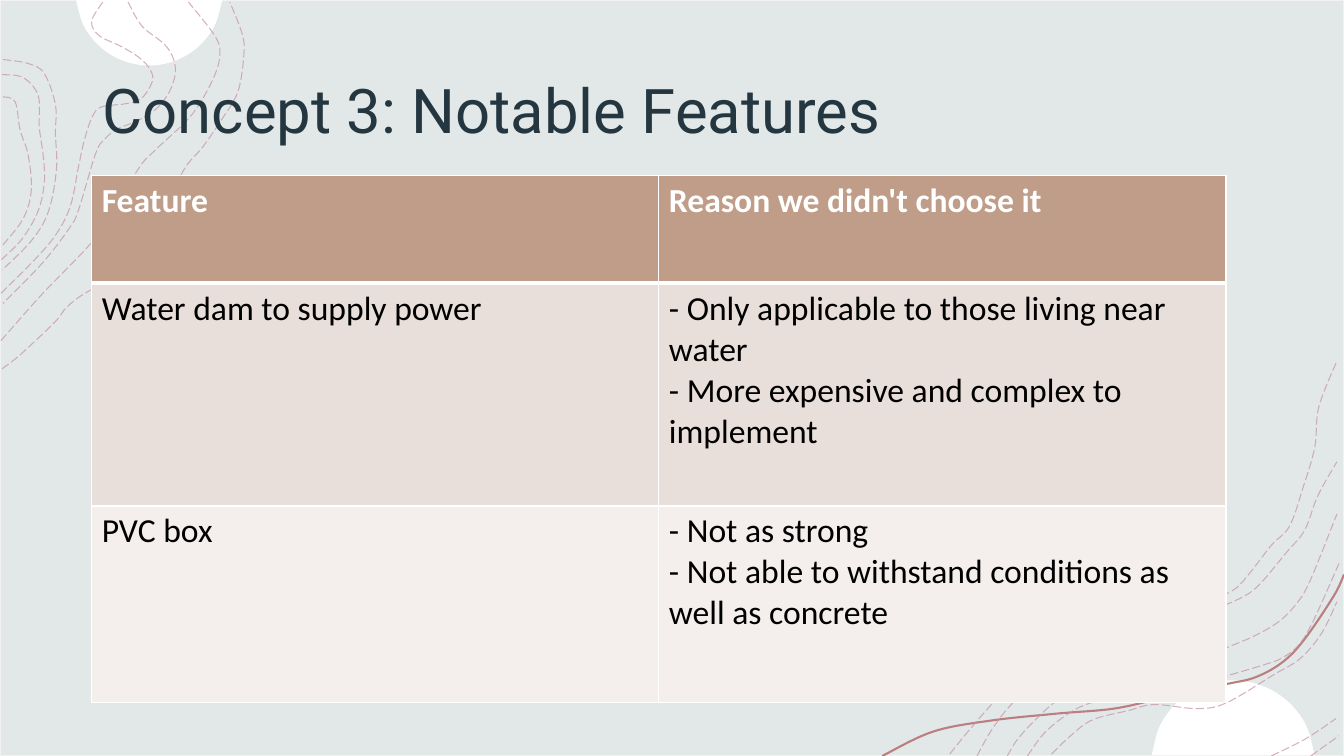
"""Build the notable features slide with its contour-line backdrop."""
from math import cos, radians, sin

from lxml.etree import SubElement
from pptx import Presentation
from pptx.dml.color import RGBColor
from pptx.enum.dml import MSO_LINE
from pptx.enum.shapes import MSO_SHAPE as Preset
from pptx.enum.text import MSO_ANCHOR as Anchor
from pptx.oxml.ns import qn
from pptx.util import Inches, Pt

MIST = RGBColor(0xE2, 0xE8, 0xE8)
EDGE = RGBColor(0xF2, 0xF2, 0xF2)
WHITE = RGBColor(0xFF, 0xFF, 0xFF)
BLACK = RGBColor(0, 0, 0)
NAVY = RGBColor(0x24, 0x37, 0x41)
ROSE = RGBColor(0xBA, 0x7F, 0x81)
MAUVE = RGBColor(0xC6, 0x96, 0xAC)
TAN = RGBColor(0xBF, 0x9D, 0x88)
BLUSH = RGBColor(0xE8, 0xDF, 0xDA)
CREAM = RGBColor(0xF4, 0xEF, 0xED)

RIBBON = [(8.75, 7.5), (9.25, 7.26), (9.82, 7.15), (10.48, 7.08), (11.05, 7.03), (11.55, 6.92),
          (12.15, 6.79), (12.45, 6.72), (12.72, 6.57), (12.94, 6.34), (13.23, 5.91), (13.33, 5.7)]

LEFT_CONTOURS = [
    [(0.02, 3.66), (0.2, 3.52), (0.55, 3.19), (0.66, 3.05), (0.86, 2.9), (1.27, 2.69),
     (1.41, 2.54), (1.6, 2.23), (1.81, 1.71), (2.01, 1.46), (2.19, 1.2), (2.36, 0.91),
     (2.42, 0.53), (2.4, 0.33), (2.28, 0.02)],
    [(0.01, 3.38), (0.38, 2.96), (0.64, 2.69), (0.88, 2.44), (1.08, 2.19), (1.37, 1.68),
     (1.54, 1.49), (1.83, 1.22), (1.98, 1.03), (2.12, 0.77), (2.18, 0.56), (2.14, 0.37),
     (1.87, 0.02)],
    [(1.27, 0.02), (1.41, 0.26), (1.65, 0.46), (1.74, 0.67), (1.69, 0.89), (1.55, 1.08),
     (1.36, 1.2), (1.16, 1.28), (1.04, 1.38), (0.95, 1.52), (0.78, 2.08), (0.69, 2.26),
     (0.42, 2.61), (0.03, 3.01)],
    [(0.01, 2.91), (0.35, 2.57), (0.56, 2.32), (0.7, 2.04), (0.78, 1.65), (0.84, 1.38), (0.92, 1.15),
     (1.01, 1.06), (1.24, 1.03), (1.4, 0.98), (1.51, 0.81), (1.49, 0.69), (1.38, 0.57), (1.2, 0.46),
     (0.98, 0.35), (0.91, 0.21), (1.02, 0.02)],
    [(0.03, 0.59), (0.28, 0.63), (0.44, 0.73), (0.55, 1.04), (0.55, 1.32), (0.56, 1.68),
     (0.48, 2.1), (0.31, 2.39), (0.02, 2.68)],
    [(0.02, 0.74), (0.23, 0.77), (0.38, 0.95), (0.39, 1.26), (0.43, 1.55), (0.44, 1.81), (0.38, 2.09),
     (0.22, 2.37), (0.01, 2.58)],
    [(0.03, 0.96), (0.15, 1.01), (0.2, 1.29), (0.28, 1.54), (0.31, 1.89), (0.23, 2.17),
     (0.03, 2.43)],
]

RIGHT_CONTOURS = [
    [(9.42, 7.48), (9.71, 7.13), (10.02, 6.8), (10.32, 6.6), (10.78, 6.3), (10.98, 6.25),
     (11.26, 6.29), (11.37, 6.29), (11.55, 6.19), (11.73, 6.06), (12, 5.96), (12.24, 5.85),
     (12.4, 5.68), (12.61, 5.41), (12.79, 5.22), (12.92, 4.85), (13.04, 4.44), (13.08, 4.04),
     (13.26, 3.58)],
    [(9.69, 7.5), (9.85, 7.22), (10.08, 6.94), (10.49, 6.62), (10.75, 6.45), (11.03, 6.38),
     (11.22, 6.41), (11.45, 6.41), (11.64, 6.33), (11.95, 6.1), (12.33, 5.92), (12.5, 5.79),
     (12.76, 5.48), (12.94, 5.26), (13.07, 4.92), (13.26, 4.58)],
    [(13, 7.5), (13.28, 7.3)],
    [(12.61, 7.5), (12.95, 7.33), (13.25, 7.13)],
    [(10.43, 7.48), (10.63, 7.29), (10.84, 7.14), (11.19, 7.05), (11.45, 6.99), (11.88, 7.03),
     (12.17, 6.97), (12.64, 6.69), (12.9, 6.53), (13.11, 6.28), (13.26, 5.97)],
    [(10.19, 7.5), (10.39, 7.24), (10.72, 7.01), (11.07, 6.92), (11.49, 6.85), (11.84, 6.8),
     (12.15, 6.71), (12.52, 6.6), (12.71, 6.53), (12.88, 6.4), (13.03, 6.15), (13.28, 5.59)],
    [(9.99, 7.5), (10.12, 7.3), (10.42, 7), (10.71, 6.8), (11, 6.75), (11.43, 6.7), (11.84, 6.58),
     (12.16, 6.43), (12.44, 6.31), (12.68, 6.17), (12.85, 6), (12.99, 5.77), (13.26, 5.1)],
]

TABLE_ROWS = [
    (1.07, TAN, ["Feature", "Reason we didn't choose it"]),
    (2.21, BLUSH, ["Water dam to supply power",
                   "- Only applicable to those living near water\n"
                   "- More expensive and complex to implement"]),
    (1.95, CREAM, ["PVC box",
                   "- Not as strong\n"
                   "- Not able to withstand conditions as well as concrete"]),
]


def bend(shape):
    """Turn the straight segments of a freeform into smooth Bezier curves."""
    outline = shape._element.find(".//" + qn("a:path"))
    points = [(int(point.get("x")), int(point.get("y"))) for point in outline.iter(qn("a:pt"))]
    padded = [points[0], *points, points[-1]]
    segments = outline.findall(qn("a:lnTo"))
    for segment, before, start, end, after in zip(segments, padded, padded[1:], padded[2:], padded[3:]):
        leave = [b + (c - a) / 6 for a, b, c in zip(before, start, end)]
        arrive = [c - (d - b) / 6 for b, c, d in zip(start, end, after)]
        curve = SubElement(outline, qn("a:cubicBezTo"))
        for x, y in (leave, arrive, end):
            SubElement(curve, qn("a:pt"), x=str(round(x)), y=str(round(y)))
        outline.replace(segment, curve)


def add_outline(page, points, close=False):
    """Add a smooth unshadowed freeform through points given in inches."""
    corners = [(Inches(x), Inches(y)) for x, y in points]
    builder = page.shapes.build_freeform(*corners[0])
    builder.add_line_segments(corners[1:], close=close)
    shape = builder.convert_to_shape()
    shape.shadow.inherit = False
    bend(shape)
    return shape


def add_curve(page, points, color, width):
    """Add an open smooth line."""
    shape = add_outline(page, points)
    shape.fill.background()
    shape.line.color.rgb = color
    shape.line.width = Pt(width)
    return shape


def add_contour(page, points):
    """Add a dashed, slightly transparent contour line."""
    shape = add_curve(page, points, MAUVE, 0.75)
    shape.line.dash_style = MSO_LINE.LONG_DASH
    color = shape._element.spPr.find(qn("a:ln")).find(".//" + qn("a:srgbClr"))
    SubElement(color, qn("a:alpha"), val="75000")


def add_disc(page, x, y, radius, first, last):
    """Add the white part of a disc between two angles in degrees."""
    angles = [radians(first + (last - first) * step / 8) for step in range(9)]
    arc = [(x + radius * cos(angle), y + radius * sin(angle)) for angle in angles]
    shape = add_outline(page, arc, close=True)
    shape.fill.solid()
    shape.fill.fore_color.rgb = WHITE
    shape.line.fill.background()


def add_backdrop(page, deck):
    """Fill the page with the pale ground, discs and contours."""
    ground = page.shapes.add_shape(Preset.RECTANGLE, 0, 0, deck.slide_width, deck.slide_height)
    ground.shadow.inherit = False
    ground.fill.solid()
    ground.fill.fore_color.rgb = MIST
    ground.line.color.rgb = EDGE
    ground.line.width = Pt(1)
    add_disc(page, 1.48, -0.08, 0.73, 6, 174)
    add_disc(page, 12.23, 7.56, 0.81, 185, 355)
    add_curve(page, RIBBON, ROSE, 1.5)
    for points in LEFT_CONTOURS + RIGHT_CONTOURS:
        add_contour(page, points)


def style_text(frame, font, size, color, bold=False):
    """Format every run in a text frame."""
    for para in frame.paragraphs:
        for span in para.runs:
            span.font.name = font
            span.font.size = Pt(size)
            span.font.bold = bold
            span.font.color.rgb = color


def add_title(page, text):
    """Add the slide title."""
    box = page.shapes.add_textbox(Inches(0.92), Inches(0.4), Inches(11.5), Inches(1.45))
    frame = box.text_frame
    frame.word_wrap = True
    frame.vertical_anchor = Anchor.MIDDLE
    frame.text = text
    frame.paragraphs[0].line_spacing = 0.9
    style_text(frame, "Roboto", 44, NAVY)


def add_borders(cell, top, bottom):
    """Give a cell white borders, with top and bottom widths in points."""
    props = cell._tc.get_or_add_tcPr()
    for side, width in (("L", 1), ("R", 1), ("T", top), ("B", bottom)):
        line = SubElement(props, qn("a:ln" + side), w=str(Pt(width)))
        fill = SubElement(line, qn("a:solidFill"))
        SubElement(fill, qn("a:srgbClr"), val=str(WHITE))


def add_feature_table(page):
    """Add the table of features and reasons."""
    height = sum(row[0] for row in TABLE_ROWS)
    table = page.shapes.add_table(len(TABLE_ROWS), 2, Inches(0.91), Inches(1.74),
                                  Inches(11.25), Inches(height)).table
    for index, (row_height, fill, texts) in enumerate(TABLE_ROWS):
        table.rows[index].height = Inches(row_height)
        header = index == 0
        for column, text in enumerate(texts):
            cell = table.cell(index, column)
            cell.text_frame.text = text
            style_text(cell.text_frame, "Calibri", 24, WHITE if header else BLACK, header)
            add_borders(cell, 3 if index == 1 else 1, 3 if header else 1)
            cell.fill.solid()
            cell.fill.fore_color.rgb = fill


def main():
    """Build and save the deck."""
    deck = Presentation()
    deck.slide_width, deck.slide_height = Inches(13.33), Inches(7.5)
    page = deck.slides.add_slide(deck.slide_layouts[6])
    add_backdrop(page, deck)
    add_title(page, "Concept 3: Notable Features")
    add_feature_table(page)
    deck.save("out.pptx")


if __name__ == "__main__":
    main()
